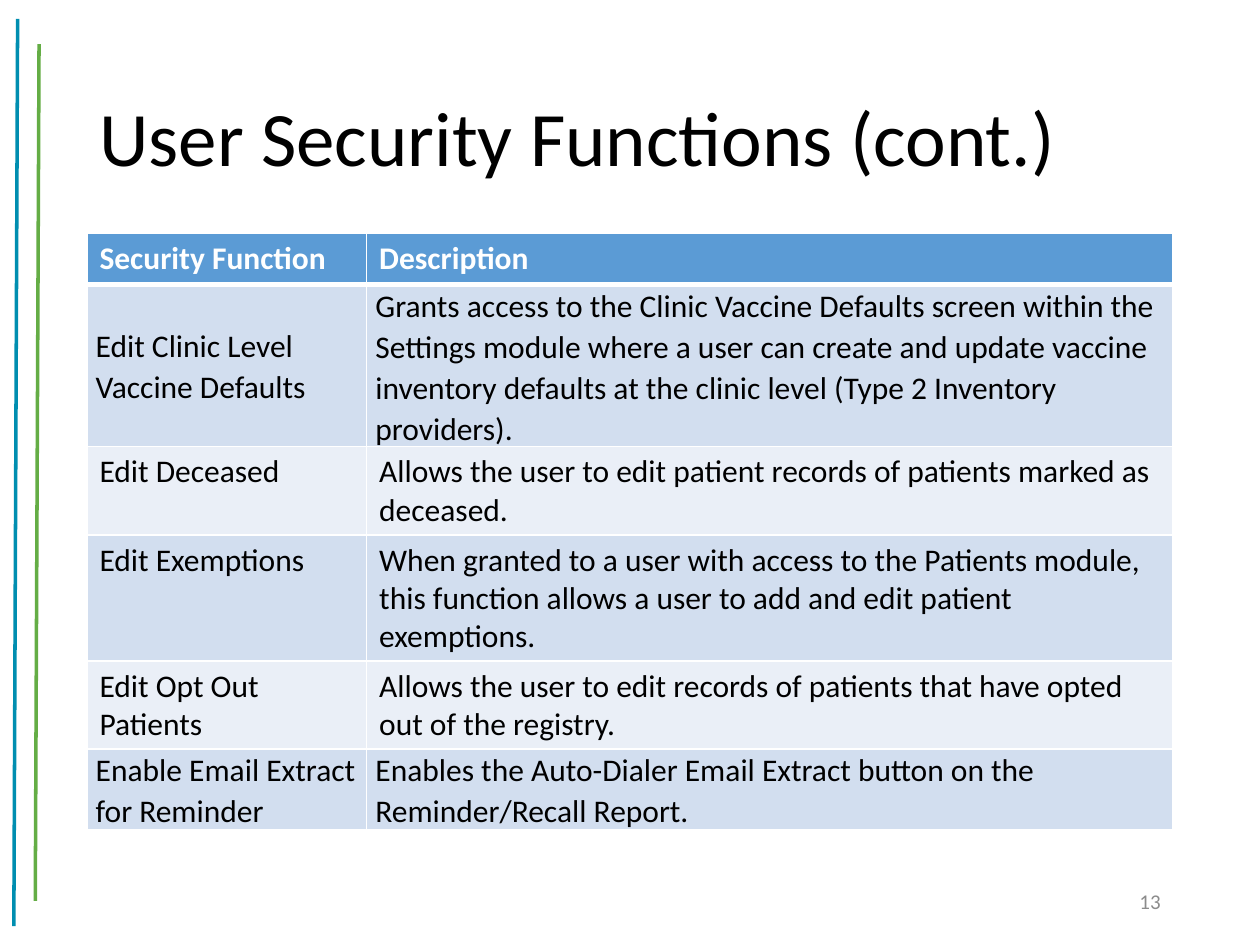
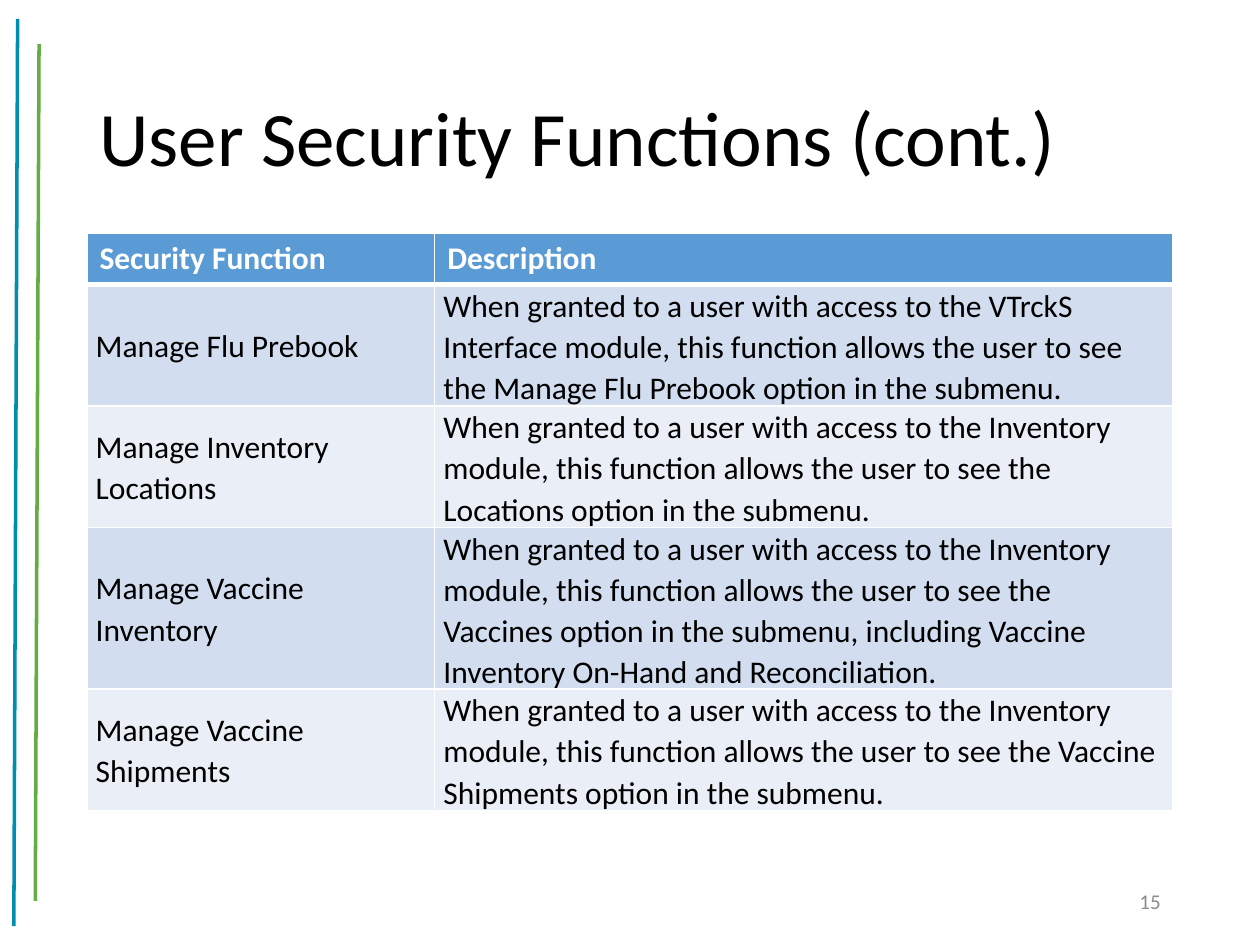
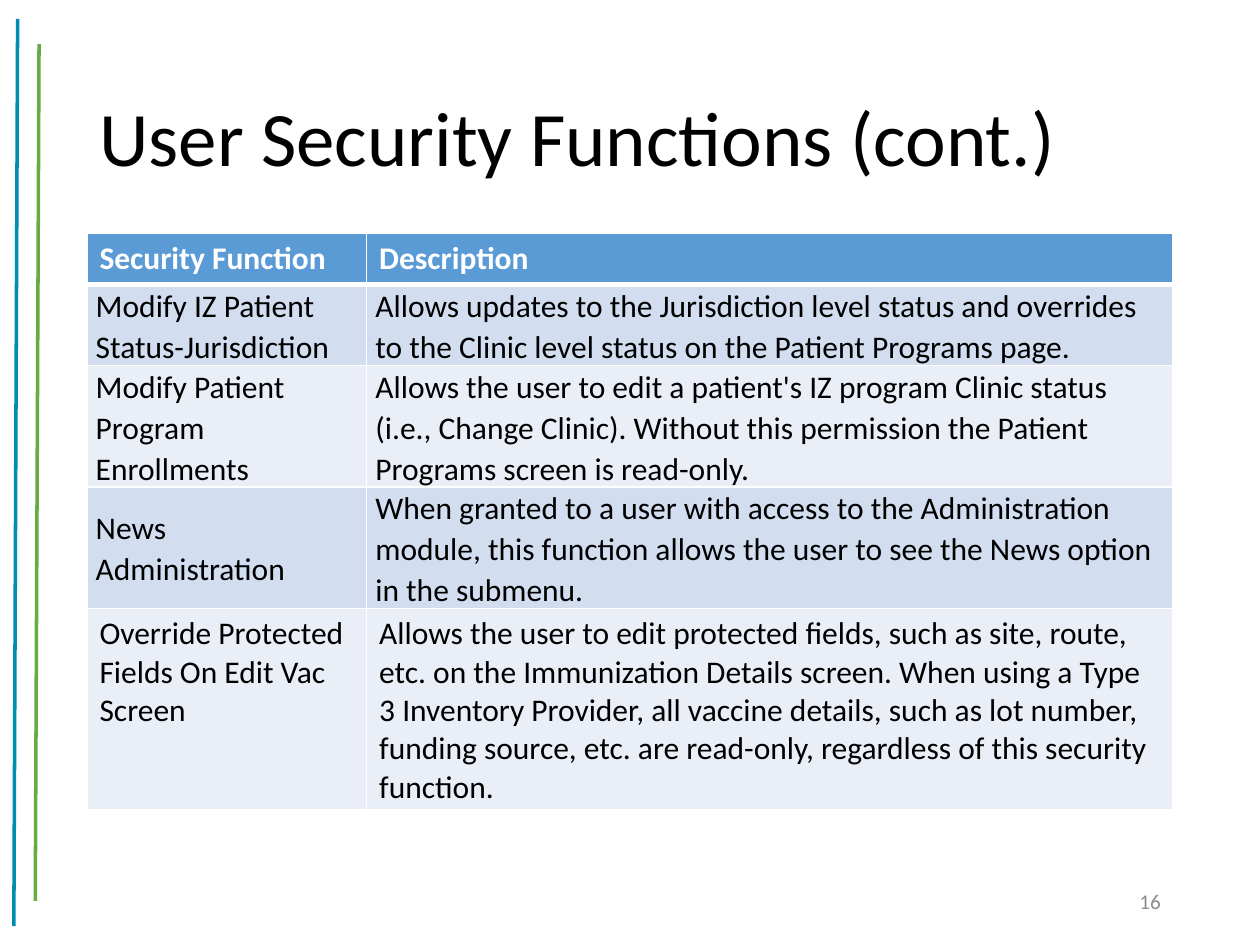
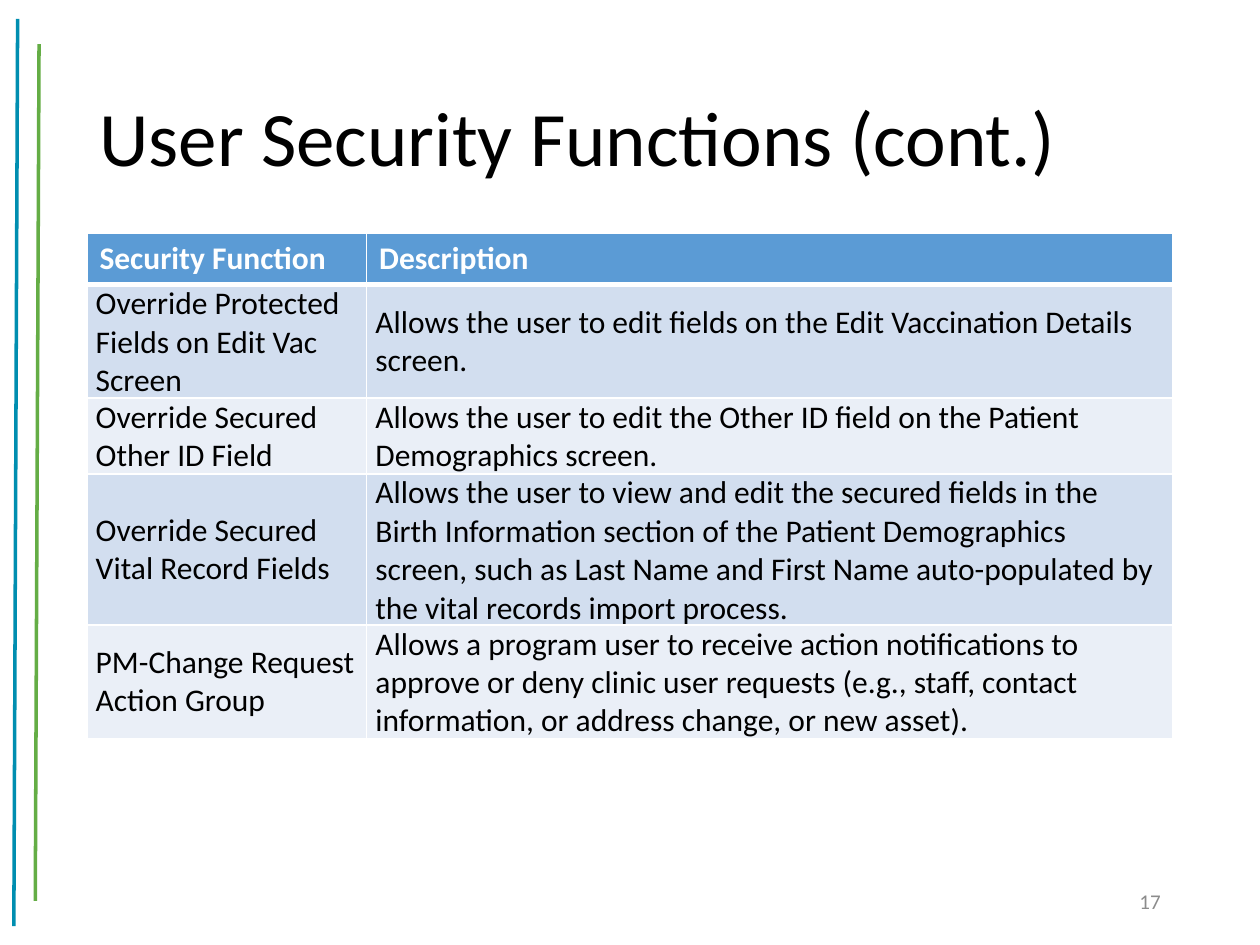
from dataclasses import dataclass

from pptx import Presentation
from pptx.dml.color import RGBColor
from pptx.enum.shapes import MSO_CONNECTOR
from pptx.enum.text import MSO_ANCHOR as Anchor, PP_ALIGN as Align
from pptx.oxml.ns import qn
from pptx.slide import Slide
from pptx.table import _Cell as Cell
from pptx.util import Inches, Pt
from lxml.etree import SubElement

COLORS = {
    "blue": "008EB0",
    "green": "64AD45",
    "header": "5B9BD5",
    "band_dark": "D2DEEF",
    "band_light": "EAEFF7",
    "white": "FFFFFF",
    "black": "000000",
    "gray": "8C8C8C",
}
FONT = "Calibri"
TITLE = "User Security Functions (cont.)"
HEADER = ("Security Function", "Description")
LEFT, TABLE_TOP, WIDTH, ROW_HEIGHT = 0.69, 1.85, 8.62, 0.41


@dataclass
class Rule:
    start: tuple[float, float]
    end: tuple[float, float]
    color: str


@dataclass
class Entry:
    name: str
    description: str
    compact: bool = True  # no vertical margins, centred in the row


@dataclass
class Page:
    number: int
    entries: list[Entry]
    name_width: float = 2.22
    spacing: float | None = 1.07  # line spacing of compact entries


RULES = [
    Rule((0.14, 0.15), (0.11, 7.35), "blue"),
    Rule((0.31, 0.35), (0.28, 7.15), "green"),
]

PAGES = [
    Page(13, [
        Entry("Edit Clinic Level Vaccine Defaults",
              "Grants access to the Clinic Vaccine Defaults screen within the Settings module "
              "where a user can create and update vaccine inventory defaults at the clinic level "
              "(Type 2 Inventory providers)."),
        Entry("Edit Deceased",
              "Allows the user to edit patient records of patients marked as deceased.", False),
        Entry("Edit Exemptions",
              "When granted to a user with access to the Patients module, this function allows "
              "a user to add and edit patient exemptions.", False),
        Entry("Edit Opt Out Patients",
              "Allows the user to edit records of patients that have opted out of the registry.",
              False),
        Entry("Enable Email Extract for Reminder",
              "Enables the Auto-Dialer Email Extract button on the Reminder/Recall Report."),
    ]),
    Page(15, [
        Entry("Manage Flu Prebook",
              "When granted to a user with access to the VTrckS Interface module, this function "
              "allows the user to see the Manage Flu Prebook option in the submenu."),
        Entry("Manage Inventory Locations",
              "When granted to a user with access to the Inventory module, this function allows "
              "the user to see the Locations option in the submenu."),
        Entry("Manage Vaccine Inventory",
              "When granted to a user with access to the Inventory module, this function allows "
              "the user to see the Vaccines option in the submenu, including Vaccine Inventory "
              "On-Hand and Reconciliation."),
        Entry("Manage Vaccine Shipments",
              "When granted to a user with access to the Inventory module, this function allows "
              "the user to see the Vaccine Shipments option in the submenu."),
    ], name_width=2.76),
    Page(16, [
        Entry("Modify IZ Patient Status-Jurisdiction",
              "Allows updates to the Jurisdiction level status and overrides to the Clinic level "
              "status on the Patient Programs page."),
        Entry("Modify Patient Program Enrollments",
              "Allows the user to edit a patient's IZ program Clinic status (i.e., Change Clinic). "
              "Without this permission the Patient Programs screen is read-only."),
        Entry("News Administration",
              "When granted to a user with access to the Administration module, this function "
              "allows the user to see the News option in the submenu."),
        Entry("Override Protected Fields On Edit Vac Screen",
              "Allows the user to edit protected fields, such as site, route, etc. on the "
              "Immunization Details screen. When using a Type 3 Inventory Provider, all vaccine "
              "details, such as lot number, funding source, etc. are read-only, regardless of "
              "this security function.", False),
    ]),
    Page(17, [
        Entry("Override Protected Fields on Edit Vac Screen",
              "Allows the user to edit fields on the Edit Vaccination Details screen."),
        Entry("Override Secured Other ID Field",
              "Allows the user to edit the Other ID field on the Patient Demographics screen."),
        Entry("Override Secured Vital Record Fields",
              "Allows the user to view and edit the secured fields in the Birth Information "
              "section of the Patient Demographics screen, such as Last Name and First Name "
              "auto-populated by the vital records import process."),
        Entry("PM-Change Request Action Group",
              "Allows a program user to receive action notifications to approve or deny clinic "
              "user requests (e.g., staff, contact information, or address change, or new asset)."),
    ], spacing=None),
]


def rgb(name: str) -> RGBColor:
    return RGBColor.from_string(COLORS[name])


def style(p, size: float, color: str, bold: bool = False) -> None:
    p.font.name = FONT
    p.font.size = Pt(size)
    p.font.bold = bold
    p.font.color.rgb = rgb(color)


def add_rule(s: Slide, rule: Rule) -> None:
    line = s.shapes.add_connector(
        MSO_CONNECTOR.STRAIGHT, *(Inches(v) for v in rule.start + rule.end))
    line.line.color.rgb = rgb(rule.color)
    line.line.width = Pt(2)
    SubElement(line._element.spPr, qn("a:effectLst"))


def add_text(s: Slide, box: tuple[float, float, float, float], text: str, size: float,
             color: str, align: Align = Align.LEFT, spacing: float | None = None) -> None:
    tf = s.shapes.add_textbox(*(Inches(v) for v in box)).text_frame
    tf.word_wrap = True
    tf.vertical_anchor = Anchor.MIDDLE
    p = tf.paragraphs[0]
    p.text = text
    p.alignment = align
    p.line_spacing = spacing
    style(p, size, color)


def fill_cell(cell: Cell, text: str, fill: str, color: str, bold: bool = False,
              top: float = 1, bottom: float = 1) -> None:
    cell.text = text
    style(cell.text_frame.paragraphs[0], 18, color, bold)
    # Borders come before the fill in the cell properties
    tc_pr = cell._tc.get_or_add_tcPr()
    for side, width in (("L", 1), ("R", 1), ("T", top), ("B", bottom)):
        ln = SubElement(tc_pr, qn(f"a:ln{side}"), w=str(Pt(width)))
        SubElement(SubElement(ln, qn("a:solidFill")), qn("a:srgbClr"), val=COLORS["white"])
    cell.fill.solid()
    cell.fill.fore_color.rgb = rgb(fill)


def make_compact(cell: Cell, spacing: float | None) -> None:
    cell.vertical_anchor = Anchor.MIDDLE
    cell.margin_left = cell.margin_right = Inches(0.07)
    cell.margin_top = cell.margin_bottom = 0
    cell.text_frame.paragraphs[0].line_spacing = spacing


def add_function_table(s: Slide, page: Page) -> None:
    rows = len(page.entries) + 1
    table = s.shapes.add_table(
        rows, 2, Inches(LEFT), Inches(TABLE_TOP), Inches(WIDTH), Inches(ROW_HEIGHT * rows)).table
    table.columns[0].width = Inches(page.name_width)
    table.columns[1].width = Inches(WIDTH - page.name_width)

    for col, text in enumerate(HEADER):
        fill_cell(table.cell(0, col), text, "header", "white", bold=True, bottom=3)
    for row, entry in enumerate(page.entries, start=1):
        band = "band_dark" if row % 2 else "band_light"
        for col, text in enumerate((entry.name, entry.description)):
            cell = table.cell(row, col)
            fill_cell(cell, text, band, "black", top=3 if row == 1 else 1)
            if entry.compact:
                make_compact(cell, page.spacing)


def add_page(prs: Presentation, page: Page) -> None:
    s = prs.slides.add_slide(prs.slide_layouts[6])
    for rule in RULES:
        add_rule(s, rule)
    add_text(s, (LEFT, 0.4, WIDTH, 1.45), TITLE, 44, "black", spacing=0.9)
    add_function_table(s, page)
    add_text(s, (7.06, 6.95, 2.25, 0.4), str(page.number), 12, "gray", Align.RIGHT)


def main() -> None:
    prs = Presentation()
    prs.slide_width, prs.slide_height = Inches(10), Inches(7.5)
    for page in PAGES:
        add_page(prs, page)
    prs.save("out.pptx")


if __name__ == "__main__":
    main()
